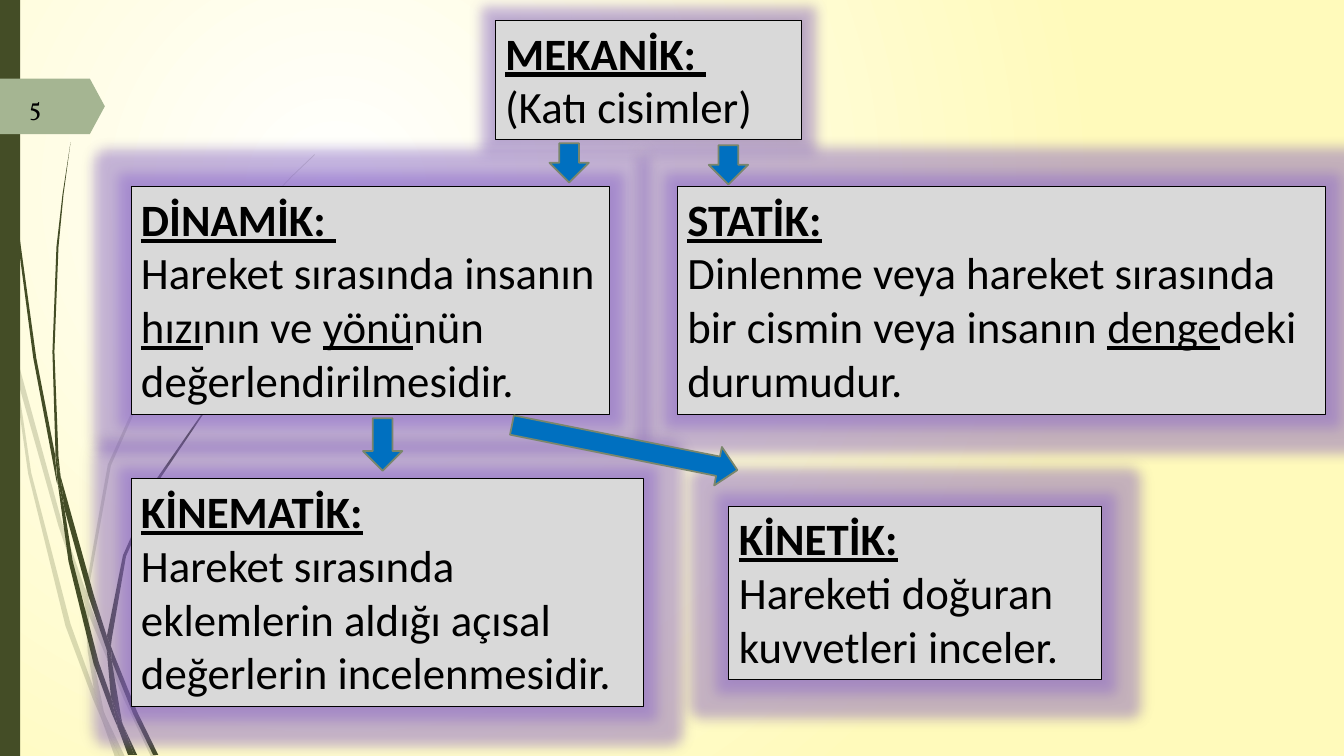
from pptx import Presentation
from pptx.dml.color import RGBColor
from pptx.enum.shapes import MSO_SHAPE
from pptx.enum.text import MSO_ANCHOR, PP_ALIGN
from pptx.oxml import parse_xml
from pptx.oxml.ns import nsdecls, qn
from pptx.util import Inches, Pt

WHITE = RGBColor(0xFF, 0xFF, 0xFF)
CREAM = RGBColor(0xFF, 0xFA, 0xBB)
OLIVE = RGBColor(0x44, 0x4D, 0x26)
SAGE = RGBColor(0xA5, 0xB5, 0x92)
GREY = RGBColor(0xD9, 0xD9, 0xD9)
BLACK = RGBColor(0, 0, 0)
BLUE = RGBColor(0x00, 0x70, 0xC0)
ARROW_LINE = RGBColor(0x7A, 0x86, 0x6C)
GLOW = RGBColor(0x8A, 0x62, 0xD2)

WIDTH, HEIGHT = 13.33, 7.5

PALE_BLADES = [
    [(0.11, 3.5), (0.09, 3.22), (0, 2.82), (0, 2.99), (0.1, 3.44)],
    [(0.58, 5.22), (0.84, 5.99), (0.85, 5.86), (0.62, 5.2), (0.14, 3.45), (0.17, 3.76)],
    [(0.92, 6.07), (0.88, 5.96), (0.88, 6.1), (1.23, 6.94), (1.5, 7.51), (1.55, 7.51),
     (1.27, 6.92)],
    [(1.19, 7.51), (1.24, 7.51), (1.05, 7.11)],
    [(0.93, 6.83), (0.7, 6.19), (0.31, 4.69), (0.17, 3.76), (0.11, 3.5), (0.28, 4.7),
     (0.65, 6.21), (0.92, 6.93), (1.01, 7.14), (0.99, 7.07)],
    [(0.84, 5.99), (0.87, 6.46), (0.93, 6.83), (0.96, 6.92), (1.05, 7.11), (1.03, 7.06),
     (0.91, 6.46), (0.88, 6.1), (0.88, 6.08)],
    [(0.88, 5.84), (1.1, 4.62), (1.6, 3.49), (2.29, 2.45), (2.68, 1.98), (2.9, 1.75),
     (3.12, 1.54), (3.12, 1.53), (2.89, 1.75), (2.68, 1.97), (2.28, 2.44), (1.58, 3.48),
     (1.07, 4.61), (0.85, 5.84), (0.85, 5.86), (0.88, 5.96)],
    [(1.01, 7.14), (1.14, 7.51), (1.19, 7.51)],
    [(0.88, 6.08), (0.88, 6.1), (0.88, 5.96), (0.85, 5.86), (0.84, 5.99)],
    [(0.96, 6.92), (0.93, 6.83), (0.99, 7.07), (1.01, 7.14), (1.19, 7.51), (1.05, 7.11)],
]
DARK_BLADES = [
    [(0.07, 1.1), (0.17, 2.33), (0.33, 3.55), (0.56, 4.77), (0.57, 4.81), (0.55, 4.57),
     (0.55, 4.53), (0.36, 3.55), (0.19, 2.32), (0.08, 1.09), (0.05, 0.48), (0.04, 0),
     (0.03, 0), (0.04, 0.48)],
    [(0.88, 5.92), (1.06, 6.45), (1.06, 6.33), (1.06, 6.31), (0.93, 5.9), (0.6, 4.72),
     (0.64, 5.05)],
    [(1.13, 6.49), (1.1, 6.41), (1.11, 6.56), (1.32, 7.08), (1.52, 7.49), (1.57, 7.49),
     (1.36, 7.06)],
    [(1.1, 6.91), (0.98, 6.57), (0.72, 5.56), (0.64, 5.05), (0.57, 4.77), (0.68, 5.57),
     (0.93, 6.59), (1.11, 7.08), (1.17, 7.22), (1.16, 7.17)],
    [(0.6, 4.72), (0.58, 4.53), (0.54, 3.49), (0.58, 2.45), (0.63, 1.93), (0.7, 1.41),
     (0.62, 1.93), (0.56, 2.45), (0.52, 3.49), (0.55, 4.49)],
    [(1.33, 7.49), (1.36, 7.49), (1.22, 7.19)],
    [(0.57, 4.77), (0.64, 5.05), (0.6, 4.72), (0.55, 4.49), (0.55, 4.53)],
    [(1.11, 6.33), (1.25, 5.52), (1.58, 4.76), (2.05, 4.06), (2.31, 3.74), (2.45, 3.59),
     (2.61, 3.44), (2.6, 3.44), (2.45, 3.58), (2.31, 3.73), (2.04, 4.05), (1.56, 4.74),
     (1.22, 5.51), (1.06, 6.31), (1.1, 6.41)],
    [(1.17, 7.22), (1.27, 7.49), (1.31, 7.49)],
    [(1.06, 6.45), (1.1, 6.91), (1.16, 7.06), (1.22, 7.19), (1.21, 7.16), (1.11, 6.56),
     (1.09, 6.51)],
    [(1.06, 6.45), (1.09, 6.51), (1.11, 6.56), (1.1, 6.41), (1.06, 6.31), (1.06, 6.33)],
    [(1.16, 7.06), (1.1, 6.91), (1.16, 7.17), (1.17, 7.22), (1.3, 7.49), (1.33, 7.49),
     (1.22, 7.19)],
]

MECHANICS = ((4.91, 0.2, 3.04, 1.18), "MEKANİK: ", "(Katı cisimler)")
BRANCHES = [
    ((1.3, 1.85, 4.75, 2.26), "DİNAMİK: ",
     "Hareket sırasında insanın _hızı_nın ve _yönü_nün değerlendirilmesidir."),
    ((6.72, 1.85, 6.43, 2.26), "STATİK:",
     "Dinlenme veya hareket sırasında bir cismin veya insanın _denge_deki durumudur."),
    ((1.3, 4.75, 5.08, 2.26), "KİNEMATİK:",
     "Hareket sırasında eklemlerin aldığı açısal değerlerin incelenmesidir."),
    ((7.23, 5.02, 3.7, 1.72), "KİNETİK:", "Hareketi doğuran kuvvetleri inceler."),
]
ARROWS = [
    ((5.45, 1.42, 0.39, 0.39), 0),
    ((7.03, 1.44, 0.39, 0.39), 0),
    ((3.6, 4.15, 0.39, 0.52), 0),
    ((6, 3.3, 0.39, 2.28), 281.3),
]


def paint(shape, fill, line=None, line_width=0.75):
    shape.fill.solid()
    shape.fill.fore_color.rgb = fill
    if line is None:
        shape.line.fill.background()
    else:
        shape.line.color.rgb = line
        shape.line.width = Pt(line_width)
    shape.shadow.inherit = False


def add_preset(slide, preset, box, fill, line=None, line_width=0.75):
    shape = slide.shapes.add_shape(preset, *map(Inches, box))
    paint(shape, fill, line, line_width)
    return shape


def add_background(slide):
    fill = slide.background.fill
    fill.gradient()
    for stop, color in zip(fill.gradient_stops, (WHITE, CREAM)):
        stop.color.rgb = color
    gradient = slide.element.find(".//" + qn("a:gradFill"))
    gradient.replace(gradient.find(qn("a:lin")), parse_xml(
        f'<a:path {nsdecls("a")} path="circle">'
        '<a:fillToRect l="50000" t="50000" r="100000" b="100000"/></a:path>'))


def add_blade(slide, points, opacity):
    outline = [(Inches(x), Inches(y)) for x, y in points]
    builder = slide.shapes.build_freeform(*outline[0])
    builder.add_line_segments(outline[1:], close=True)
    blade = builder.convert_to_shape()
    paint(blade, OLIVE)
    if opacity < 100:
        color = blade.element.spPr.find(qn("a:solidFill"))[0]
        color.append(parse_xml(f'<a:alpha {nsdecls("a")} val="{opacity * 1000}"/>'))


def add_side_decoration(slide):
    for blades, opacity in ((PALE_BLADES, 20), (DARK_BLADES, 100)):
        for points in blades:
            add_blade(slide, points, opacity)
    add_preset(slide, MSO_SHAPE.RECTANGLE, (0, 0, 0.2, HEIGHT), OLIVE)


def add_page_tag(slide, box, number):
    tag = add_preset(slide, MSO_SHAPE.PENTAGON, box, SAGE)
    tag.adjustments[0] = 0.27
    frame = tag.text_frame
    frame.margin_left = Inches(0.29)
    frame.vertical_anchor = MSO_ANCHOR.MIDDLE
    paragraph = frame.paragraphs[0]
    paragraph.text = number
    paragraph.alignment = PP_ALIGN.LEFT
    paragraph.font.name = "Vollkorn"
    paragraph.font.size = Pt(18)
    paragraph.font.color.rgb = BLACK


def add_glow(shape):
    effects = shape.element.spPr.find(qn("a:effectLst"))
    effects.append(parse_xml(
        f'<a:glow {nsdecls("a")} rad="{Inches(0.25)}"><a:srgbClr val="{GLOW}">'
        '<a:alpha val="40000"/></a:srgbClr></a:glow>'))
    effects.append(parse_xml(
        f'<a:outerShdw {nsdecls("a")} blurRad="{Pt(6)}" dist="0" dir="18900000">'
        f'<a:srgbClr val="{BLACK}"><a:alpha val="20000"/></a:srgbClr></a:outerShdw>'))


def fill_definition(shape, box, term, meaning):
    shape.left, shape.top, shape.width, shape.height = map(Inches, box)
    paint(shape, GREY, BLACK)
    add_glow(shape)
    frame = shape.text_frame
    frame.word_wrap = True
    frame.vertical_anchor = MSO_ANCHOR.TOP
    heading, body = frame.paragraphs[0], frame.add_paragraph()
    heading.text = term
    for index, part in enumerate(meaning.split("_")):
        run = body.add_run()
        run.text = part
        run.font.underline = index % 2 == 1
    for paragraph in (heading, body):
        paragraph.alignment = PP_ALIGN.LEFT
        paragraph.font.name = "Calibri"
        paragraph.font.size = Pt(32)
        paragraph.font.color.rgb = BLACK
    heading.font.bold = heading.font.underline = True


def add_concept_map(slide):
    fill_definition(slide.shapes.title, *MECHANICS)
    for box, term, meaning in BRANCHES:
        shape = add_preset(slide, MSO_SHAPE.RECTANGLE, box, GREY)
        fill_definition(shape, box, term, meaning)
    for box, rotation in ARROWS:
        arrow = add_preset(slide, MSO_SHAPE.DOWN_ARROW, box, BLUE, ARROW_LINE, 1.25)
        arrow.rotation = rotation


def main():
    presentation = Presentation()
    presentation.slide_width = Inches(WIDTH)
    presentation.slide_height = Inches(HEIGHT)
    slide = presentation.slides.add_slide(presentation.slide_layouts[5])
    add_background(slide)
    add_side_decoration(slide)
    add_page_tag(slide, (0, 0.78, 1.04, 0.55), "5")
    add_concept_map(slide)
    presentation.save("out.pptx")


if __name__ == "__main__":
    main()
